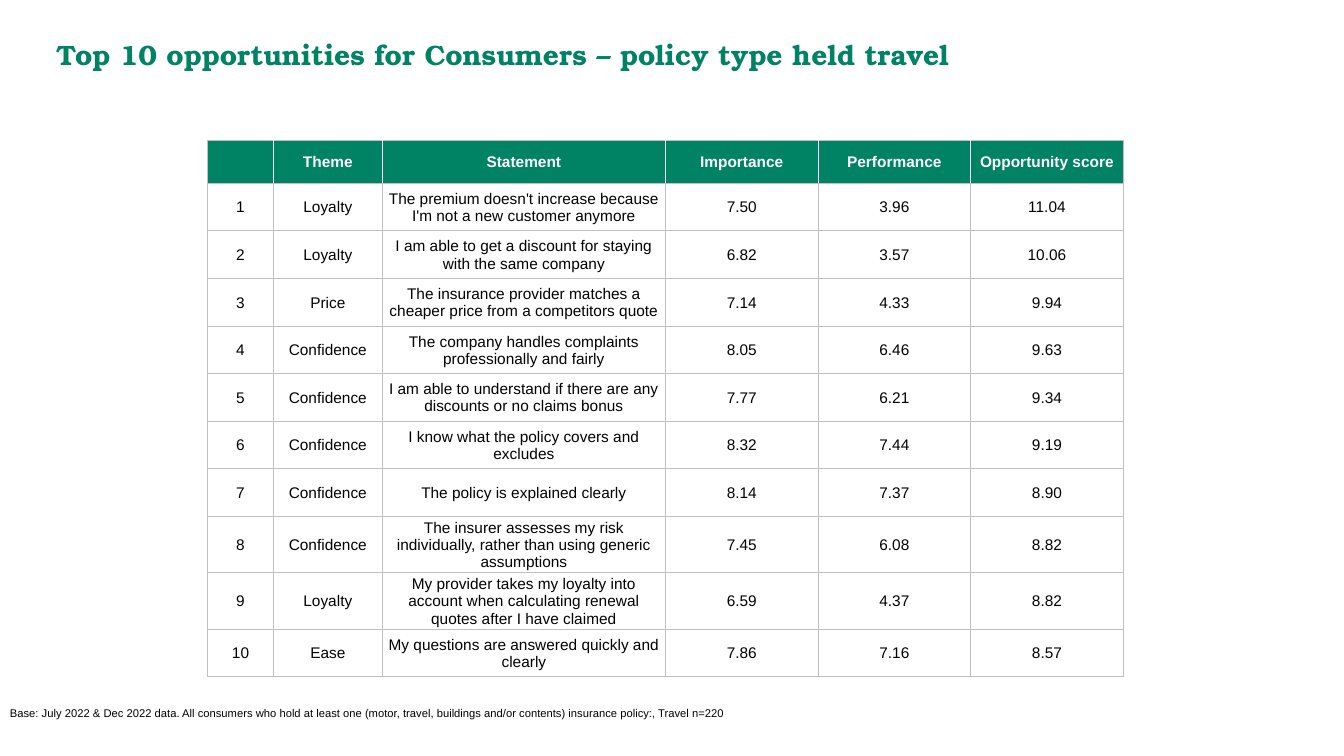
import pptx
import pptx.dml.color
import pptx.enum.text
import pptx.oxml
import pptx.oxml.ns
import pptx.util

Pt = pptx.util.Pt
ALIGN = pptx.enum.text.PP_ALIGN
ANCHOR = pptx.enum.text.MSO_ANCHOR
AUTO_SIZE = pptx.enum.text.MSO_AUTO_SIZE

GREEN, WHITE, GREY, BLACK = "008265", "FFFFFF", "BFBFBF", "000000"

TITLE = "Top 10 opportunities for Consumers – policy type held travel"
BASE_NOTE = ("Base: July 2022 & Dec 2022 data. All consumers who hold at least one (motor, travel, "
             "buildings and/or contents) insurance policy:, Travel n=220")
HEADINGS = ["", "Theme", "Statement", "Importance", "Performance", "Opportunity score"]
OPPORTUNITIES = [
    ("Loyalty", "The premium doesn't increase because I'm not a new customer anymore",
     "7.50", "3.96", "11.04"),
    ("Loyalty", "I am able to get a discount for staying with the same company",
     "6.82", "3.57", "10.06"),
    ("Price", "The insurance provider matches a cheaper price from a competitors quote",
     "7.14", "4.33", "9.94"),
    ("Confidence", "The company handles complaints professionally and fairly",
     "8.05", "6.46", "9.63"),
    ("Confidence", "I am able to understand if there are any discounts or no claims bonus",
     "7.77", "6.21", "9.34"),
    ("Confidence", "I know what the policy covers and excludes",
     "8.32", "7.44", "9.19"),
    ("Confidence", "The policy is explained clearly",
     "8.14", "7.37", "8.90"),
    ("Confidence", "The insurer assesses my risk individually, rather than using generic assumptions",
     "7.45", "6.08", "8.82"),
    ("Loyalty", "My provider takes my loyalty into account when calculating renewal quotes "
     "after I have claimed", "6.59", "4.37", "8.82"),
    ("Ease", "My questions are answered quickly and clearly",
     "7.86", "7.16", "8.57"),
]

COLUMN_WIDTHS = [47, 77.8, 202.3, 109, 109, 109]
HEADER_HEIGHT, ROW_HEIGHT, TALL_ROW_HEIGHT = 30.8, 34, 40.3
THREE_LINE_RANKS = (8, 9)

TITLE_FONT = {"name": "TeX Gyre Bonum", "size": Pt(20), "bold": True}
HEADING_FONT = {"name": "Arial", "size": Pt(11), "bold": True}
BODY_FONT = {"name": "Arial", "size": Pt(11), "bold": False}
NOTE_FONT = {"name": "Arial", "size": Pt(8), "bold": False}
TITLE_PLACE = {"left": Pt(33.1), "top": Pt(23), "width": Pt(884.2), "height": Pt(31.7)}
TITLE_FRAME = {"word_wrap": True, "vertical_anchor": ANCHOR.MIDDLE,
               "auto_size": AUTO_SIZE.SHAPE_TO_FIT_TEXT}
NOTE_FRAME = {"word_wrap": True, "vertical_anchor": ANCHOR.TOP}
CELL_FORMAT = {"vertical_anchor": ANCHOR.MIDDLE, "margin_left": Pt(2), "margin_right": Pt(2),
               "margin_top": Pt(0.72), "margin_bottom": Pt(0)}


def apply_format(target, values):
    for attribute, value in values.items():
        setattr(target, attribute, value)


def set_color(color_format, hex_color):
    color_format.rgb = pptx.dml.color.RGBColor.from_string(hex_color)


def write_text(frame, text, font, hex_color, alignment):
    frame.text = text
    paragraph = frame.paragraphs[0]
    paragraph.alignment = alignment
    for run in paragraph.runs:
        apply_format(run.font, font)
        set_color(run.font.color, hex_color)


def set_border(cell, side, hex_color, width):
    cell._tc.get_or_add_tcPr().append(pptx.oxml.parse_xml(
        f'<a:ln{side} {pptx.oxml.ns.nsdecls("a")} w="{Pt(width)}">'
        f'<a:solidFill><a:srgbClr val="{hex_color}"/></a:solidFill></a:ln{side}>'))


def fill_cell(cell, text, is_header, inner_sides):
    apply_format(cell, CELL_FORMAT)
    # Borders come before the fill in the cell properties
    for side in "LRTB":
        white_rule = is_header and side in inner_sides
        set_border(cell, side, *((WHITE, 1) if white_rule else (GREY, 0.75)))
    if is_header:
        cell.fill.solid()
        set_color(cell.fill.fore_color, GREEN)
    else:
        cell.fill.background()
    font, hex_color = (HEADING_FONT, WHITE) if is_header else (BODY_FONT, BLACK)
    write_text(cell.text_frame, text, font, hex_color, ALIGN.CENTER)


def add_title(slide):
    title = slide.shapes.title
    apply_format(title, TITLE_PLACE)
    apply_format(title.text_frame, TITLE_FRAME)
    write_text(title.text_frame, TITLE, TITLE_FONT, GREEN, ALIGN.LEFT)


def add_opportunity_table(slide):
    rows = [HEADINGS] + [(str(rank), *entry) for rank, entry in enumerate(OPPORTUNITIES, 1)]
    heights = [HEADER_HEIGHT] + [
        TALL_ROW_HEIGHT if rank in THREE_LINE_RANKS else ROW_HEIGHT
        for rank in range(1, len(rows))]
    last_column = len(HEADINGS) - 1
    opportunities = slide.shapes.add_table(
        len(rows), len(HEADINGS), Pt(148.3), Pt(100.1),
        Pt(sum(COLUMN_WIDTHS)), Pt(sum(heights))).table
    opportunities.horz_banding = False
    for column, width in zip(opportunities.columns, COLUMN_WIDTHS):
        column.width = Pt(width)
    for row_index, (entries, height) in enumerate(zip(rows, heights)):
        opportunities.rows[row_index].height = Pt(height)
        for column_index, text in enumerate(entries):
            inner_sides = ("L" if column_index > 0 else "") + ("R" if column_index < last_column else "")
            fill_cell(opportunities.cell(row_index, column_index), text, row_index == 0, inner_sides)


def add_base_note(slide):
    note = slide.shapes.add_textbox(Pt(0), Pt(501.1), Pt(784.8), Pt(38.9))
    apply_format(note.text_frame, NOTE_FRAME)
    write_text(note.text_frame, BASE_NOTE, NOTE_FONT, BLACK, ALIGN.LEFT)


def main():
    deck = pptx.Presentation()
    deck.slide_width, deck.slide_height = Pt(960), Pt(540)
    slide = deck.slides.add_slide(deck.slide_layouts[5])
    add_title(slide)
    add_opportunity_table(slide)
    add_base_note(slide)
    deck.save("out.pptx")


if __name__ == "__main__":
    main()
